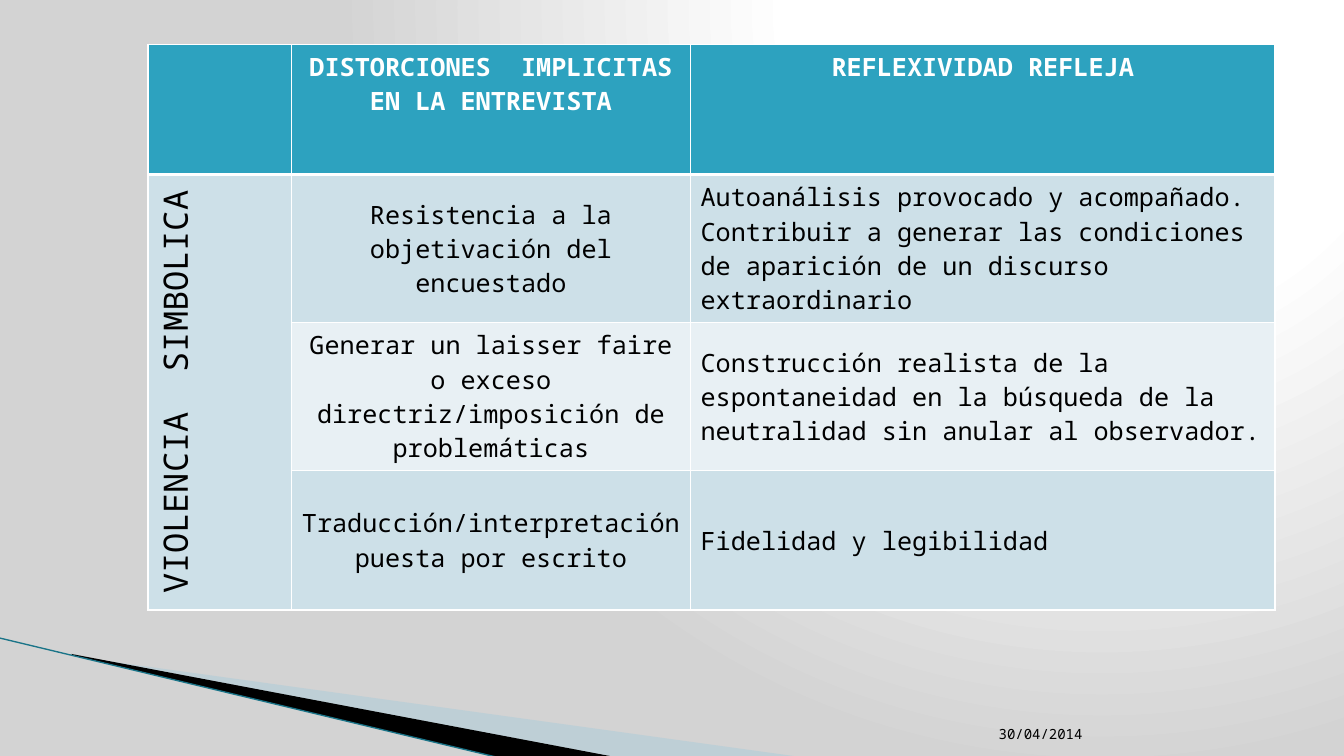
from pptx import Presentation
from pptx.dml.color import RGBColor as RGB
from pptx.enum.shapes import MSO_CONNECTOR as Link
from pptx.enum.text import MSO_ANCHOR as Anchor, PP_ALIGN as Align
from pptx.oxml import parse_xml
from pptx.oxml.ns import qn
from pptx.util import Cm, Pt
from lxml.etree import SubElement as Sub

FONT = "Noto Sans Mono"
HUES = {
    "white": "FFFFFF",
    "black": "000000",
    "grey": "D3D3D3",
    "head": "2DA2BF",
    "odd": "CDE0E8",
    "even": "E8F0F4",
    "wing": "A0CBDC",
    "edge": "1A7488",
}
NS = ('xmlns:a="http://schemas.openxmlformats.org/drawingml/2006/main" '
      'xmlns:p="http://schemas.openxmlformats.org/presentationml/2006/main"')
COLS = [3.61, 10.06, 14.73]
ROWS = [3.28, 3.73, 3.73, 3.51]
TEXTS = [
    ["", "DISTORCIONES  IMPLICITAS EN LA ENTREVISTA", "REFLEXIVIDAD REFLEJA"],
    ["VIOLENCIA  SIMBOLICA",
     "Resistencia a la objetivación del encuestado",
     "Autoanálisis provocado y acompañado.\n"
     "Contribuir a generar las condiciones de aparición de un discurso "
     "extraordinario"],
    ["",
     "Generar un laisser faire o exceso directriz/imposición de problemáticas",
     "Construcción realista de la espontaneidad en la búsqueda de la "
     "neutralidad sin anular al observador."],
    ["", "Traducción/interpretación puesta por escrito",
     "Fidelidad y legibilidad"],
]


def hue(name):
    return RGB.from_string(HUES[name])


def style(frame, size, color, bold=False, align=Align.LEFT):
    for para in frame.paragraphs:
        para.alignment = align
        for font in [para.font] + [run.font for run in para.runs]:
            font.name = FONT
            font.size = Pt(size)
            font.bold = bold
            font.color.rgb = hue(color)


def draw_back(slide):
    stops = "".join(
        f'<a:gs pos="{pos}"><a:srgbClr val="{HUES[name]}"/></a:gs>'
        for pos, name in [(0, "white"), (40000, "white"), (100000, "grey")])
    back = parse_xml(
        f'<p:bg {NS}><p:bgPr><a:gradFill rotWithShape="1">'
        f'<a:gsLst>{stops}</a:gsLst><a:path path="circle">'
        '<a:fillToRect l="65000" t="0" r="0" b="98000"/></a:path>'
        '</a:gradFill><a:effectLst/></p:bgPr></p:bg>')
    slide.element.cSld.insert(0, back)


def draw_wing(slide, left, top, points, color, alpha=None):
    spots = [(Cm(left + x), Cm(top + y)) for x, y in points]
    form = slide.shapes.build_freeform(*spots[0])
    form.add_line_segments(spots[1:], close=True)
    wing = form.convert_to_shape()
    wing.shadow.inherit = False
    wing.fill.solid()
    wing.fill.fore_color.rgb = hue(color)
    wing.line.fill.background()
    if alpha:
        tint = wing.element.spPr.find(".//" + qn("a:srgbClr"))
        Sub(tint, qn("a:alpha"), val=str(alpha * 1000))


def draw_wings(slide, left, top):
    draw_wing(slide, left, top,
              [(1.85, 0.46), (20.14, 2.99), (15.44, 2.99), (1.85, 0.43)],
              "wing", 40)
    draw_wing(slide, left, top,
              [(1.8, 0.4), (15.47, 2.99), (12.6, 3.02), (1.83, 0.43)],
              "black")
    edge = slide.shapes.add_connector(
        Link.STRAIGHT, Cm(left), Cm(top), Cm(left + 12.6), Cm(top + 3.02))
    edge.line.width = Pt(0.95)
    edge.line.color.rgb = hue("edge")
    Sub(edge.element.spPr, qn("a:effectLst"))


def draw_date(slide, left, top, width, height):
    box = slide.shapes.add_textbox(Cm(left), Cm(top), Cm(width), Cm(height))
    frame = box.text_frame
    frame.word_wrap = True
    frame.vertical_anchor = Anchor.BOTTOM
    frame.text = "30/04/2014"
    style(frame, 10, "black")


def rule_cell(cell, row):
    props = cell._tc.get_or_add_tcPr()
    widths = {"L": 1, "R": 1, "T": 3 if row == 1 else 1,
              "B": 3 if row == 0 else 1}
    for side, width in widths.items():
        line = Sub(props, qn("a:ln" + side), w=str(Pt(width)))
        fill = Sub(line, qn("a:solidFill"))
        Sub(fill, qn("a:srgbClr"), val=HUES["white"])


def fill_cell(cell, row, col, text):
    head = row == 0
    side = col == 0
    rule_cell(cell, row)
    cell.fill.solid()
    shade = "head" if head else "odd" if side or row % 2 else "even"
    cell.fill.fore_color.rgb = hue(shade)
    cell.vertical_anchor = Anchor.TOP if head else Anchor.MIDDLE
    cell.text_frame.text = text
    style(cell.text_frame, 24 if side and not head else 18,
          "white" if head else "black", head,
          Align.CENTER if head or col < 2 else Align.LEFT)


def draw_table(slide, left, top):
    grid = slide.shapes.add_table(
        len(ROWS), len(COLS), Cm(left), Cm(top),
        Cm(sum(COLS)), Cm(sum(ROWS))).table
    for col, width in zip(grid.columns, COLS):
        col.width = Cm(width)
    for row, height in zip(grid.rows, ROWS):
        row.height = Cm(height)
    for row, line in enumerate(TEXTS):
        for col, text in enumerate(line):
            fill_cell(grid.cell(row, col), row, col, text)
    side = grid.cell(1, 0)
    side.merge(grid.cell(len(ROWS) - 1, 0))
    side.margin_top = side.margin_bottom = Cm(0.1)
    side.margin_left = side.margin_right = Cm(0.25)
    side._tc.get_or_add_tcPr().set("vert", "vert270")


def main():
    deck = Presentation()
    deck.slide_width = Cm(33.87)
    deck.slide_height = Cm(19.05)
    slide = deck.slides.add_slide(deck.slide_layouts[6])
    draw_back(slide)
    draw_wings(slide, 0, 16.08)
    draw_date(slide, 24.92, 17.81, 7.11, 1.02)
    draw_table(slide, 3.73, 1.12)
    deck.save("out.pptx")


if __name__ == "__main__":
    main()
